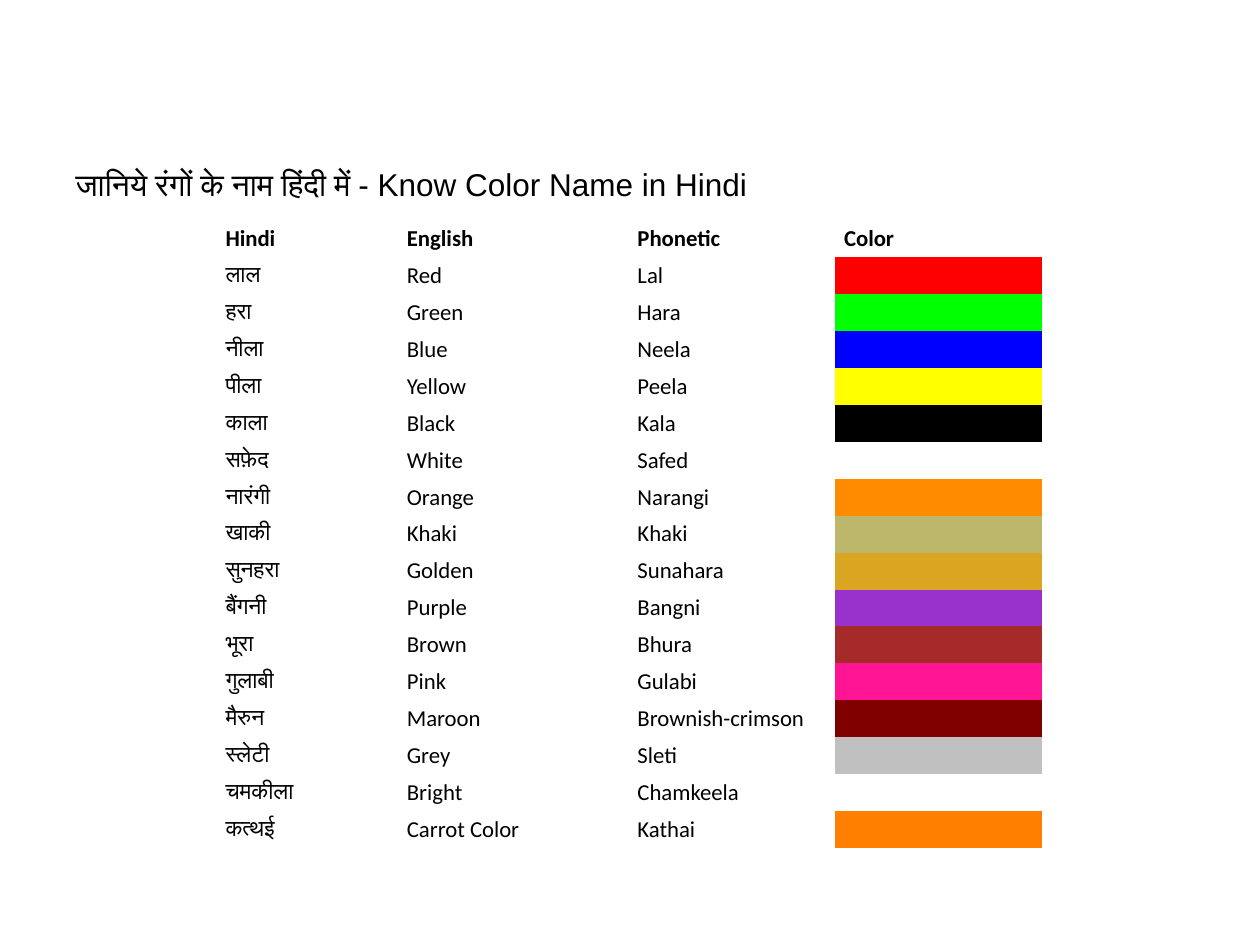
from pptx import Presentation
from pptx.dml.color import RGBColor
from pptx.enum.text import MSO_ANCHOR, PP_ALIGN
from pptx.util import Inches, Pt

HUES = {
    "Red": "FF0000", "Green": "00FF00", "Blue": "0000FF",
    "Yellow": "FFFF00", "Black": "000000", "White": "FFFFFF",
    "Orange": "FF8C00", "Khaki": "BDB76B", "Golden": "DAA520",
    "Purple": "9932CD", "Brown": "A62A2A", "Pink": "FF1494",
    "Maroon": "800000", "Grey": "C0C0C0", "Bright": "FFFFFF",
    "Carrot Color": "FF7F00",
}
HEADS = ("Hindi", "English", "Phonetic", "Color")
WORDS = [
    ("लाल", "Red", "Lal"),
    ("हरा", "Green", "Hara"),
    ("नीला", "Blue", "Neela"),
    ("पीला", "Yellow", "Peela"),
    ("काला", "Black", "Kala"),
    ("सफ़ेद", "White", "Safed"),
    ("नारंगी", "Orange", "Narangi"),
    ("खाकी", "Khaki", "Khaki"),
    ("सुनहरा", "Golden", "Sunahara"),
    ("बैंगनी", "Purple", "Bangni"),
    ("भूरा", "Brown", "Bhura"),
    ("गुलाबी", "Pink", "Gulabi"),
    ("मैरुन", "Maroon", "Brownish-crimson"),
    ("स्लेटी", "Grey", "Sleti"),
    ("चमकीला", "Bright", "Chamkeela"),
    ("कत्थई", "Carrot Color", "Kathai"),
]
WIDTHS = (1.44, 1.83, 1.64, 1.64)
PLAIN = "{2D5ABB26-0587-4C30-8999-92F81FD0307C}"


def set_font(para, face, size, bold=False):
    font = para.font
    font.name, font.size, font.bold = face, Pt(size), bold
    font.color.rgb = RGBColor.from_string(HUES["Black"])


def add_title(slide, text):
    title = slide.shapes.title
    title.left, title.top = Inches(0.5), Inches(1.21)
    title.width, title.height = Inches(9), Inches(0.5)
    frame = title.text_frame
    frame.text = text
    frame.vertical_anchor = MSO_ANCHOR.MIDDLE
    para = frame.paragraphs[0]
    para.alignment = PP_ALIGN.LEFT
    set_font(para, "Arial", 18)


def fill_cell(cell, text, bold=False):
    cell.text = text
    cell.vertical_anchor = MSO_ANCHOR.MIDDLE
    cell.margin_left = cell.margin_right = Inches(0.07)
    cell.margin_top = cell.margin_bottom = Inches(0.03)
    cell.fill.background()
    set_font(cell.text_frame.paragraphs[0], "Calibri", 13, bold)


def paint_cell(cell, hue):
    fill_cell(cell, "")
    cell.fill.solid()
    cell.fill.fore_color.rgb = RGBColor.from_string(hue)


def add_grid(slide):
    frame = slide.shapes.add_table(
        len(WORDS) + 1, len(HEADS),
        Inches(1.72), Inches(1.75), Inches(sum(WIDTHS)), Inches(4.98))
    table = frame.table
    table.first_row = table.horz_banding = False
    table._tbl.tblPr.find("{*}tableStyleId").text = PLAIN
    for col, width in zip(table.columns, WIDTHS):
        col.width = Inches(width)
    for col, head in enumerate(HEADS):
        fill_cell(table.cell(0, col), head, bold=True)
    for row, words in enumerate(WORDS, 1):
        for col, word in enumerate(words):
            fill_cell(table.cell(row, col), word)
        paint_cell(table.cell(row, len(words)), HUES[words[1]])


def main():
    deck = Presentation()
    deck.slide_width, deck.slide_height = Inches(10), Inches(7.5)
    slide = deck.slides.add_slide(deck.slide_layouts[5])
    add_grid(slide)
    add_title(slide, "जानिये रंगों के नाम हिंदी में - Know Color Name in Hindi")
    deck.save("out.pptx")


if __name__ == "__main__":
    main()
